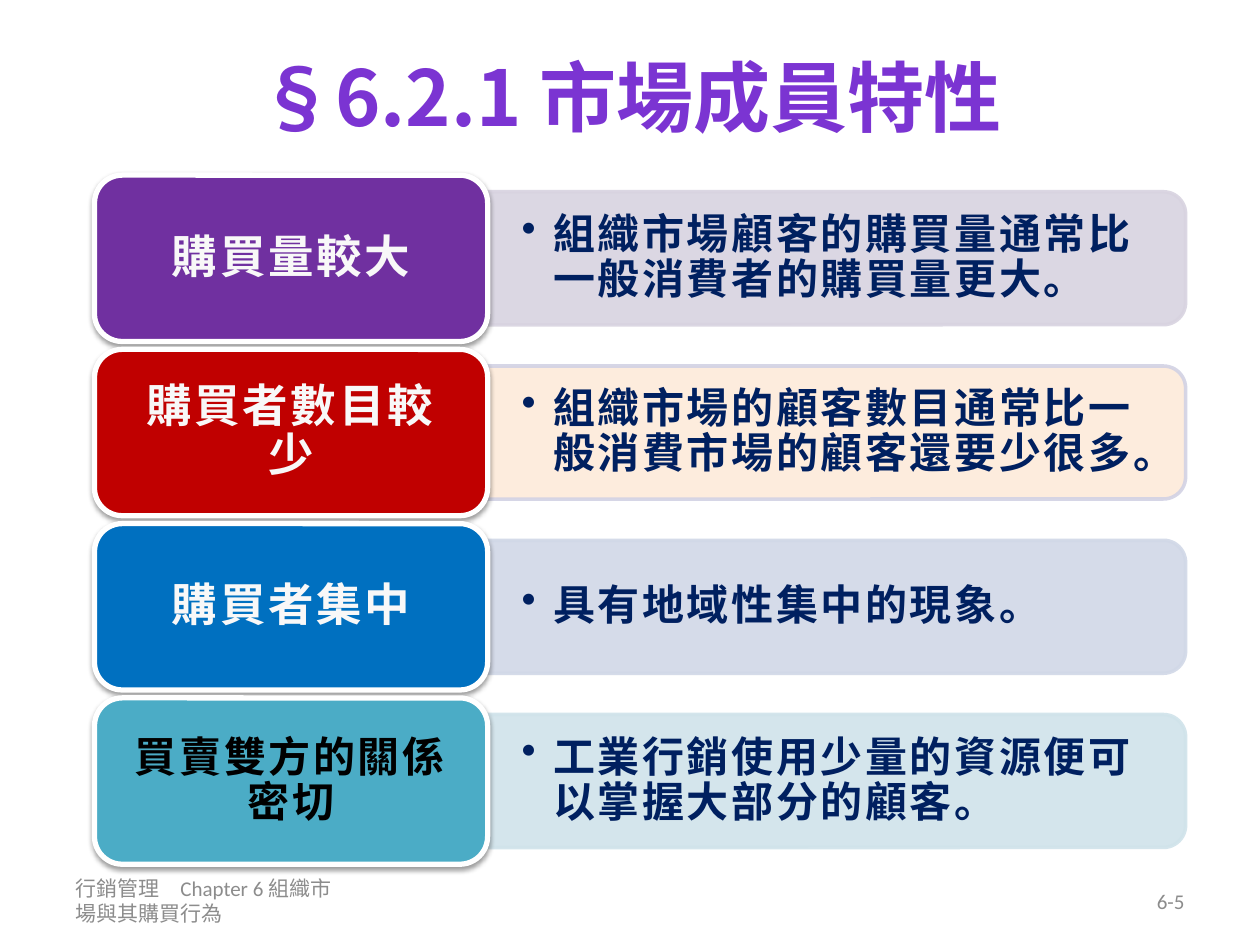
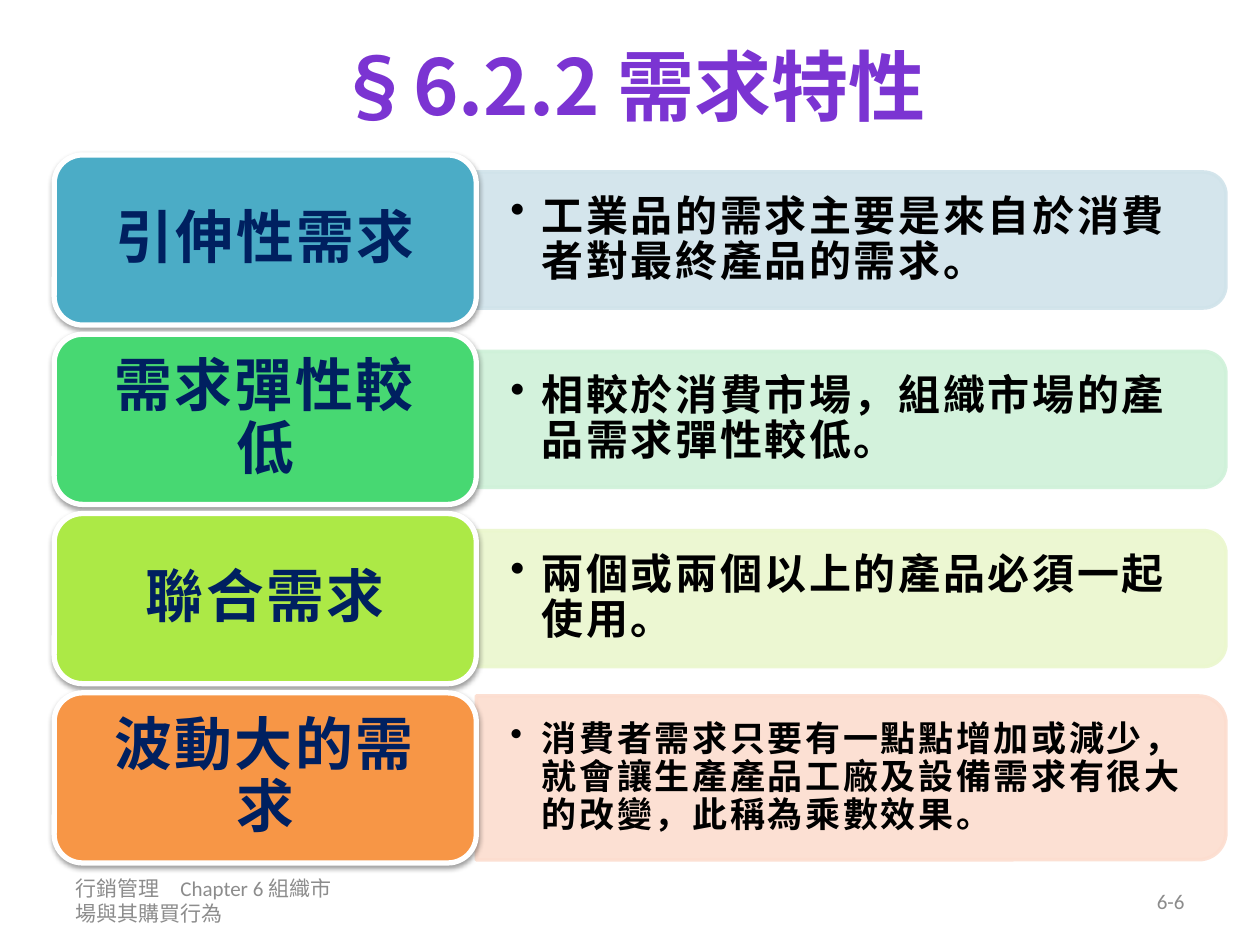
from lxml import etree
from pptx import Presentation
from pptx import util as u
from pptx.dml.color import RGBColor
from pptx.enum import shapes, text
from pptx.oxml import ns, parse_xml

# Grid: 100 columns by 75 rows
COLUMNS, ROWS = 100, 75
HEADING_FONT, FOOTER_FONT = "Noto Sans CJK SC", "Calibri"

# Colours
WHITE = RGBColor(0xFF, 0xFF, 0xFF)
OFF_WHITE = RGBColor(0xF8, 0xF8, 0xF8)
BLACK = RGBColor(0x00, 0x00, 0x00)
NAVY = RGBColor(0x00, 0x20, 0x60)
GREY = RGBColor(0x8C, 0x8C, 0x8C)
PURPLE = RGBColor(0x70, 0x30, 0xA0)
RED = RGBColor(0xC0, 0x00, 0x00)
BLUE = RGBColor(0x00, 0x70, 0xC0)
TEAL = RGBColor(0x4B, 0xAC, 0xC6)
GREEN = RGBColor(0x47, 0xD8, 0x72)
LIME = RGBColor(0xAC, 0xE9, 0x46)
ORANGE = RGBColor(0xF7, 0x96, 0x46)
PALE_PURPLE = RGBColor(0xD8, 0xD3, 0xE0)
PALE_PEACH = RGBColor(0xFD, 0xEA, 0xDA)
PALE_LAVENDER = RGBColor(0xD2, 0xD2, 0xE4)
PALE_BLUE = RGBColor(0xD1, 0xD8, 0xE7)
PALE_TEAL = RGBColor(0xD0, 0xE3, 0xEA)
PALE_GREEN = RGBColor(0xCF, 0xF1, 0xD9)
PALE_LIME = RGBColor(0xEB, 0xF7, 0xCE)
PALE_ORANGE = RGBColor(0xFC, 0xDD, 0xCF)
TITLE_OUTLINE = RGBColor(0x5E, 0x45, 0x7C)
TITLE_STOPS = [(0, RGBColor(0x3D, 0x1B, 0x67)), (43, RGBColor(0x7B, 0x34, 0xD2)),
               (48, RGBColor(0x73, 0x30, 0xC4)), (100, RGBColor(0x3D, 0x1B, 0x67))]

FOOTER = "行銷管理　Chapter 6 組織市場與其購買行為"

# Each row: label, label colour, description, panel fill, then any exceptions
SLIDES = [
    dict(title="§6.2.1 市場成員特性", title_at=(5, 1.3), number="6-5",
         grid=dict(left=7.5, top=13.9, pitch=13.83, height=13.2, label=31.2, panel=55.4),
         label_style=dict(size=26, color=OFF_WHITE), body_color=NAVY, padding=0.17,
         rows=[
             ("購買量較大", PURPLE, "組織市場顧客的購買量通常比一般消費者的購買量更大。", PALE_PURPLE, {}),
             ("購買者數目較少", RED, "組織市場的顧客數目通常比一般消費市場的顧客還要少很多。", PALE_PEACH,
              dict(edge=PALE_LAVENDER)),
             ("購買者集中", BLUE, "具有地域性集中的現象。", PALE_BLUE, {}),
             ("買賣雙方的關係密切", TEAL, "工業行銷使用少量的資源便可以掌握大部分的顧客。", PALE_TEAL,
              dict(label=dict(size=24, color=BLACK))),
         ]),
    dict(title="§6.2.2 需求特性", title_at=(5.1, 0.4), number="6-6",
         grid=dict(left=4.3, top=12.3, pitch=14.23, height=13.5, label=33.5, panel=59.5),
         label_style=dict(size=33, color=NAVY), body_color=BLACK, padding=0.2,
         rows=[
             ("引伸性需求", TEAL, "工業品的需求主要是來自於消費者對最終產品的需求。", PALE_TEAL, {}),
             ("需求彈性較低", GREEN, "相較於消費市場，組織市場的產品需求彈性較低。", PALE_GREEN, {}),
             ("聯合需求", LIME, "兩個或兩個以上的產品必須一起使用。", PALE_LIME, {}),
             ("波動大的需求", ORANGE,
              "消費者需求只要有一點點增加或減少，就會讓生產產品工廠及設備需求有很大的改變，此稱為乘數效果。",
              PALE_ORANGE, dict(size=20, panel_height=13)),
         ]),
]


def add_alpha(element, percent):
    """Make every plain colour below an element partly transparent."""
    for color in element.iter(ns.qn("a:srgbClr")):
        etree.SubElement(color, ns.qn("a:alpha")).set("val", str(percent * 1000))


class Deck:
    def __init__(self):
        self.presentation = Presentation()
        self.presentation.slide_width = u.Inches(10)
        self.presentation.slide_height = u.Inches(7.5)
        self.column = self.presentation.slide_width / COLUMNS
        self.row = self.presentation.slide_height / ROWS
        self.slide = None

    def new_slide(self):
        self.slide = self.presentation.slides.add_slide(self.presentation.slide_layouts[6])

    def box(self, left, top, width, height):
        return [round(value * unit) for value, unit in
                zip((left, top, width, height), (self.column, self.row) * 2)]

    def set_text(self, shape, words, align=text.PP_ALIGN.LEFT, padding=(0.1, 0.05), spacing=None,
                 tracking=None, bullet=False, name=HEADING_FONT, color=None, **font_values):
        """Fill a shape with one formatted paragraph and return its run."""
        frame = shape.text_frame
        side, end = (u.Inches(inset) for inset in padding)
        frame_values = dict(word_wrap=True, vertical_anchor=text.MSO_ANCHOR.MIDDLE,
                            margin_left=side, margin_right=side,
                            margin_top=end, margin_bottom=end)
        for key, value in frame_values.items():
            setattr(frame, key, value)
        paragraph = frame.paragraphs[0]
        paragraph.alignment = align
        if spacing:
            paragraph.line_spacing = spacing
        if bullet:
            properties = paragraph._p.get_or_add_pPr()
            properties.set("marL", str(u.Inches(0.25)))
            properties.set("indent", str(u.Inches(-0.25)))
            etree.SubElement(properties, ns.qn("a:buChar")).set("char", "•")
        run = paragraph.add_run()
        run.text = words
        for key, value in dict(font_values, name=name).items():
            setattr(run.font, key, u.Pt(value) if key == "size" else value)
        if color is not None:
            run.font.color.rgb = color
        run_properties = run._r.get_or_add_rPr()
        if tracking:
            run_properties.set("spc", str(round(tracking * 100)))
        east_asian = etree.Element(ns.qn("a:ea"), typeface=HEADING_FONT)
        run_properties.find(ns.qn("a:latin")).addnext(east_asian)
        return run

    def text_box(self, place, words, **style):
        return self.set_text(self.slide.shapes.add_textbox(*self.box(*place)), words, **style)

    def block(self, preset, place, fill, edge, edge_width):
        shape = self.slide.shapes.add_shape(preset, *self.box(*place))
        shape.shadow.inherit = False
        shape.fill.solid()
        shape.fill.fore_color.rgb = fill
        shape.line.color.rgb = edge
        shape.line.width = u.Pt(edge_width)
        return shape

    def title(self, words, place):
        run = self.text_box((*place, 90, 12.6), words, align=text.PP_ALIGN.CENTER,
                            size=44, bold=True)
        stops = "".join(f'<a:gs pos="{position * 1000}"><a:srgbClr val="{color}"/></a:gs>'
                        for position, color in TITLE_STOPS)
        declaration = ns.nsdecls("a")
        gradient = (f'<a:gradFill {declaration}><a:gsLst>{stops}</a:gsLst>'
                    '<a:lin ang="5400000" scaled="0"/></a:gradFill>')
        outline = (f'<a:ln {declaration} w="{u.Pt(0.71)}"><a:solidFill>'
                   f'<a:srgbClr val="{TITLE_OUTLINE}"/></a:solidFill></a:ln>')
        for position, xml in enumerate((outline, gradient)):
            run._r.get_or_add_rPr().insert(position, parse_xml(xml))

    def footer(self, number):
        style = dict(size=12, name=FOOTER_FONT, color=GREY)
        self.text_box((5, 69.5, 23.3, 4), FOOTER, **style)
        self.text_box((71.7, 69.5, 23.3, 4), number, align=text.PP_ALIGN.RIGHT, **style)

    def panel(self, left, middle, width, height, words, fill, edge, size, color):
        # A quarter turn puts the rounded corners on the right
        place = (left + (width - height) / 2, middle - width / 2, height, width)
        shape = self.block(shapes.MSO_SHAPE.ROUND_2_SAME_RECTANGLE, place, fill, edge, 2)
        shape.rotation = 90
        add_alpha(shape._element.spPr, 90)
        text_height = height * 0.905
        self.text_box((left, middle - text_height / 2, width - 0.5, text_height), words,
                      padding=(0.27, 0.14), spacing=0.9, tracking=1.5, bullet=True,
                      size=size, bold=True, color=color)

    def label(self, place, words, fill, padding, style):
        shape = self.block(shapes.MSO_SHAPE.ROUNDED_RECTANGLE, place, fill, WHITE, 3)
        effects = shape._element.spPr.find(ns.qn("a:effectLst"))
        shadow = etree.SubElement(effects, ns.qn("a:outerShdw"), blurRad=str(u.Pt(3.1)),
                                  dist=str(u.Pt(1.6)), dir="5400000", rotWithShape="0")
        etree.SubElement(shadow, ns.qn("a:srgbClr")).set("val", str(BLACK))
        add_alpha(shadow, 38)
        self.set_text(shape, words, align=text.PP_ALIGN.CENTER, padding=(padding, 0.1),
                      spacing=0.9, tracking=1.5, bold=True, **style)

    def label_rows(self, content):
        grid = content["grid"]
        for index, (name, color, body, pale, exceptions) in enumerate(content["rows"]):
            top = grid["top"] + index * grid["pitch"]
            self.panel(grid["left"] + grid["label"], top + grid["height"] / 2, grid["panel"],
                       exceptions.get("panel_height", grid["height"] * 0.8), body, pale,
                       exceptions.get("edge", pale), exceptions.get("size", 24),
                       content["body_color"])
            self.label((grid["left"], top, grid["label"], grid["height"]), name, color,
                       content["padding"], exceptions.get("label", content["label_style"]))


def main():
    deck = Deck()
    for content in SLIDES:
        deck.new_slide()
        deck.title(content["title"], content["title_at"])
        deck.footer(content["number"])
        deck.label_rows(content)
    deck.presentation.save("out.pptx")


if __name__ == "__main__":
    main()
